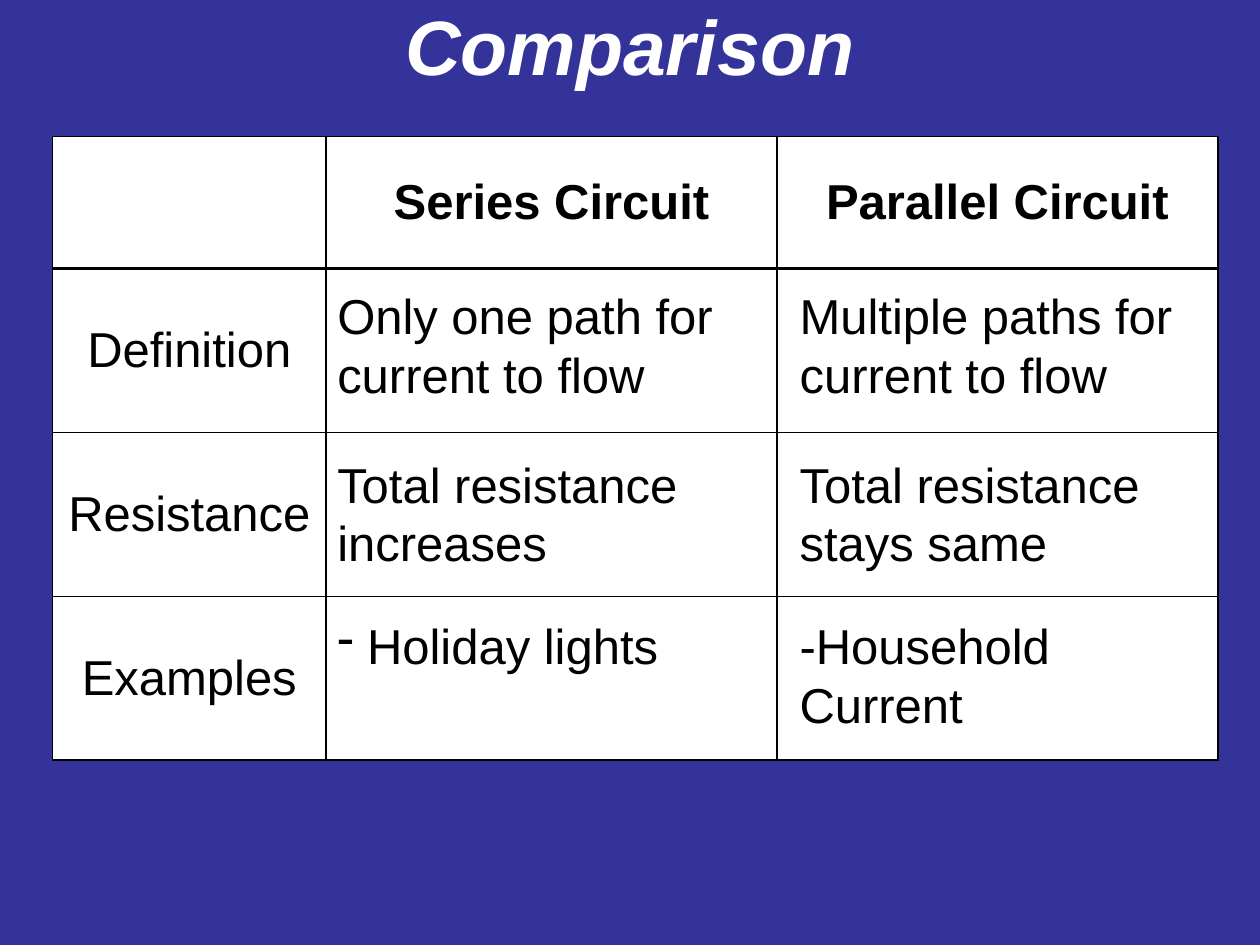
from lxml import etree
from pptx import Presentation
from pptx.dml.color import RGBColor
from pptx.enum.text import MSO_ANCHOR as ANCHOR, MSO_AUTO_SIZE as AUTO, PP_ALIGN as ALIGN
from pptx.oxml import parse_xml
from pptx.oxml.ns import nsdecls, qn
from pptx.util import Cm, Pt

COLORS = {"back": "333399", "title": "FFFFFF", "cell": "FFFFFF", "ink": "000000"}
FONT = "Arial"

HEADS = ["", "Series Circuit", "Parallel Circuit"]
ROWS = [
    ("Definition", "Only one path for current to flow", "Multiple paths for current to flow"),
    ("Resistance", "Total resistance increases", "Total resistance stays same"),
    ("Examples", "Holiday lights", "-Household Current"),
]
COL_WIDTHS = [5.51, 9.09, 8.89]
ROW_HEIGHTS = [2.67, 3.3, 3.3, 3.3]

# Answer boxes, as offsets from the table's corner
ANSWER_LEFTS = [5.49, 14.81]
ANSWER_TOPS = [2.89, 6.28, 9.53]
ANSWER_WIDTH, LINE_HEIGHT = 9.1, 1.18


def rgb(name):
    return RGBColor.from_string(COLORS[name])


def style(p, size, color, bold=False, italic=False, align=ALIGN.LEFT):
    p.alignment = align
    f = p.font
    f.name, f.size, f.bold, f.italic = FONT, Pt(size), bold, italic
    f.color.rgb = rgb(color)


def add_text(slide, x, y, w, h, text):
    tb = slide.shapes.add_textbox(Cm(x), Cm(y), Cm(w), Cm(h))
    tf = tb.text_frame
    tf.word_wrap = True
    tf.text = text
    return tf


def add_title(slide, x, y, w, h, text):
    p = add_text(slide, x, y, w, h, text).paragraphs[0]
    p.line_spacing = 0.8
    style(p, 44, "title", bold=True, italic=True, align=ALIGN.CENTER)


def set_borders(cell, widths):
    """Draw the left, right, top and bottom lines, before the cell's fill."""
    tcPr = cell._tc.get_or_add_tcPr()
    for i, (side, width) in enumerate(zip("LRTB", widths)):
        tcPr.insert(i, parse_xml(
            f'<a:ln{side} {nsdecls("a")} w="{Pt(width)}"><a:solidFill>'
            f'<a:srgbClr val="{COLORS["ink"]}"/></a:solidFill></a:ln{side}>'))


def add_grid(slide, x, y):
    w, h = sum(COL_WIDTHS), sum(ROW_HEIGHTS)
    labels = [HEADS] + [[name, "", ""] for name, *_ in ROWS]
    table = slide.shapes.add_table(
        len(labels), len(HEADS), Cm(x), Cm(y), Cm(w), Cm(h)).table
    for col, width in zip(table.columns, COL_WIDTHS):
        col.width = Cm(width)
    for row, height in zip(table.rows, ROW_HEIGHTS):
        row.height = Cm(height)
    for r, row in enumerate(labels):
        for c, text in enumerate(row):
            cell = table.cell(r, c)
            cell.text = text
            cell.vertical_anchor = ANCHOR.MIDDLE
            cell.fill.solid()
            cell.fill.fore_color.rgb = rgb("cell")
            style(cell.text_frame.paragraphs[0], 28, "ink",
                  bold=r == 0, align=ALIGN.CENTER)
            # A heavier line parts the header from the body
            set_borders(cell, (1, 1, 2 if r == 1 else 1, 2 if r == 0 else 1))


def add_dash(p):
    pPr = p._p.get_or_add_pPr()
    pPr.set("marL", str(Cm(0.6)))
    pPr.set("indent", str(-Cm(0.6)))
    bullet = etree.Element(qn("a:buChar"), char="-")
    pPr.insert_element_before(bullet, "a:tabLst", "a:defRPr", "a:extLst")


def add_answers(slide, x, y):
    for (_, *answers), top in zip(ROWS, ANSWER_TOPS):
        for text, left in zip(answers, ANSWER_LEFTS):
            dashed = text == "Holiday lights"
            lines = 1 if dashed else 2
            tf = add_text(slide, x + left, y + top, ANSWER_WIDTH,
                          0.25 + lines * LINE_HEIGHT, text)
            tf.auto_size = AUTO.SHAPE_TO_FIT_TEXT
            style(tf.paragraphs[0], 28, "ink")
            if dashed:
                add_dash(tf.paragraphs[0])


def add_comparison(slide, x, y):
    add_grid(slide, x, y)
    add_answers(slide, x, y)


def main():
    prs = Presentation()
    prs.slide_width, prs.slide_height = Cm(25.4), Cm(19.05)
    s = prs.slides.add_slide(prs.slide_layouts[6])
    s.background.fill.solid()
    s.background.fill.fore_color.rgb = rgb("back")
    add_title(s, 1.27, 0.2, 22.86, 2.1, "Comparison")
    add_comparison(s, 1.06, 2.75)
    prs.save("out.pptx")


if __name__ == "__main__":
    main()
